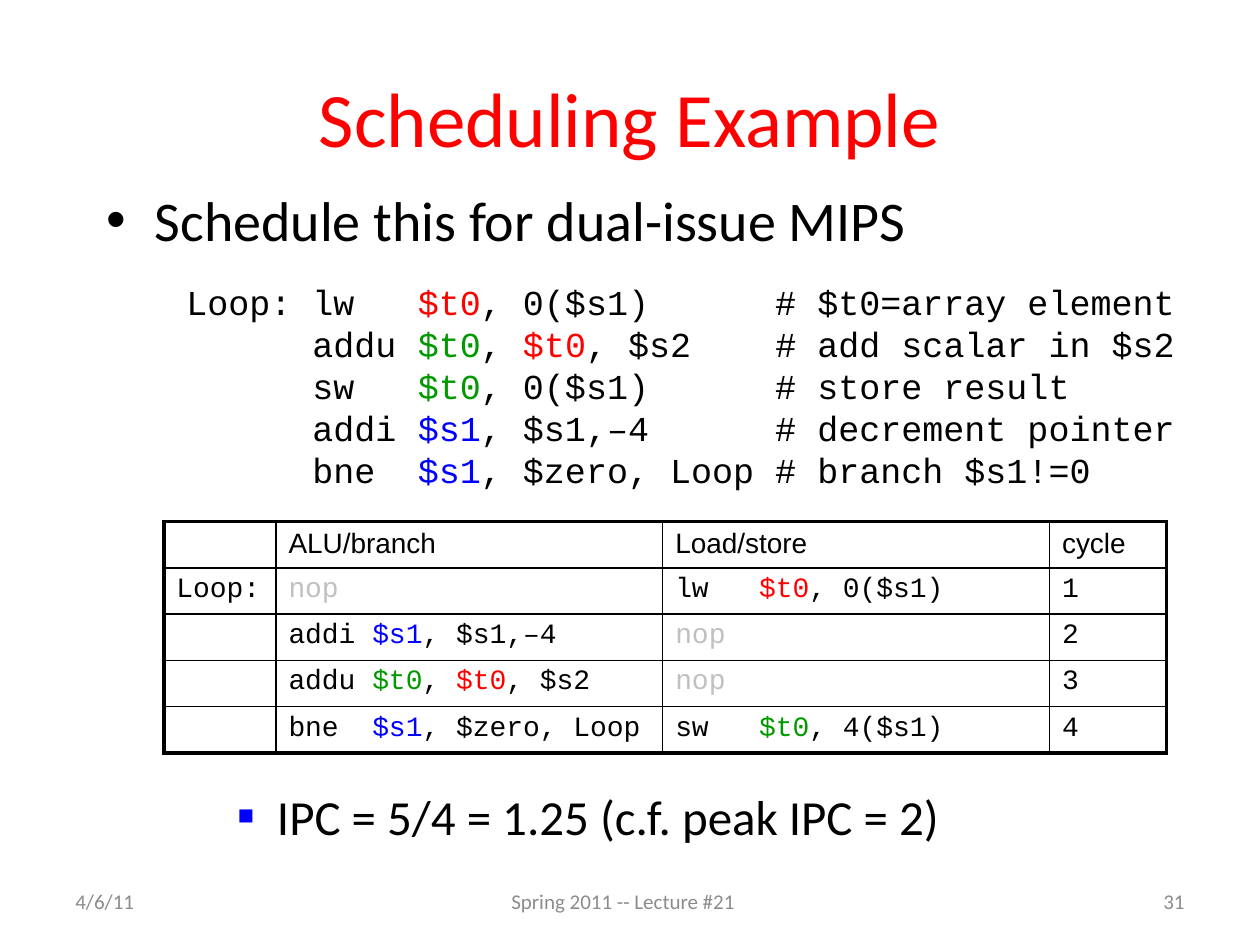
import pptx
import pptx.dml.color
import pptx.enum.text
import pptx.oxml
import pptx.oxml.ns
import pptx.util
from lxml import etree

Inches = pptx.util.Inches
Pt = pptx.util.Pt
ALIGN = pptx.enum.text.PP_ALIGN
MIDDLE = pptx.enum.text.MSO_ANCHOR.MIDDLE
qn = pptx.oxml.ns.qn

THEME = {
    "black": "000000", "red": "FF0000", "green": "009900", "blue": "0000FF",
    "nop": "C0C0C0", "footer": "8C8C8C",
    "sans": "Calibri", "head": "Arial", "mono": "Courier New",
    "title_pt": 44, "bullet_pt": 32, "sub_pt": 28, "code_pt": 20,
    "cell_pt": 16, "footer_pt": 12,
}

# Registers, coloured by the value they carry
LOADED = ("$t0", "red")
SUM = ("$t0", "green")
POINTER = ("$s1", "blue")
NOP = [("nop", "nop")]


def add_runs(p, parts, font, size, color="black"):
    """Add plain strings and (text, colour) pairs as runs."""
    for part in parts:
        text, tint = (part, color) if isinstance(part, str) else part
        r = p.add_run()
        r.text = text
        r.font.name = THEME[font]
        r.font.size = Pt(THEME[size])
        r.font.color.rgb = pptx.dml.color.RGBColor.from_string(THEME[tint])


def add_ppr(p, *children):
    """Append paragraph settings, after 20 percent space before."""
    pPr = p._p.get_or_add_pPr()
    for xml in ('<a:spcBef %s><a:spcPct val="20000"/></a:spcBef>',) + children:
        pPr.append(pptx.oxml.parse_xml(xml % pptx.oxml.ns.nsdecls("a")))
    return pPr


prs = pptx.Presentation()
prs.slide_width, prs.slide_height = Inches(10), Inches(7.5)
slide = prs.slides.add_slide(prs.slide_layouts[5])

# Title
sp = slide.shapes.title
sp.left, sp.top, sp.width, sp.height = Inches(0.5), Inches(0.3), Inches(9), Inches(1.25)
tf = sp.text_frame
tf.vertical_anchor = MIDDLE
p = tf.paragraphs[0]
p.alignment = ALIGN.CENTER
add_runs(p, ["Scheduling Example"], "sans", "title_pt", "red")

# Bullets: text, box, size, left margin, hanging indent, bullet settings
bullets = [
    ("Schedule this for dual-issue MIPS", (0.75, 1.42, 9.05, 0.76), "bullet_pt",
     0.38, -0.38,
     ['<a:buFont %s typeface="Arial"/>', '<a:buChar %s char="•"/>']),
    ("IPC = 5/4 = 1.25 (c.f. peak IPC = 2)", (1.29, 6.19, 8.5, 0.71), "sub_pt",
     0.81, -0.31,
     ['<a:buClr %s><a:srgbClr val="' + THEME["blue"] + '"/></a:buClr>',
      '<a:buSzPct %s val="55000"/>',
      '<a:buFont %s typeface="Arial"/>', '<a:buChar %s char="■"/>']),
]
for text, box, size, margin, indent, marks in bullets:
    sp = slide.shapes.add_textbox(*map(Inches, box))
    tf = sp.text_frame
    tf.word_wrap = True
    p = tf.paragraphs[0]
    pPr = add_ppr(p, *marks)
    pPr.set("marL", str(Inches(margin)))
    pPr.set("indent", str(Inches(indent)))
    add_runs(p, [text], "sans", size)

# Assembly code, one paragraph with line breaks
code = [
    ["Loop: lw   ", LOADED, ", 0($s1)      # $t0=array element"],
    ["      addu ", SUM, ", ", LOADED, ", $s2    # add scalar in $s2"],
    ["      sw   ", SUM, ", 0($s1)      # store result"],
    ["      addi ", POINTER, ", $s1,–4      # decrement pointer"],
    ["      bne  ", POINTER, ", $zero, Loop # branch $s1!=0"],
]
sp = slide.shapes.add_textbox(Inches(1.38), Inches(2.18), Inches(8.15), Inches(1.78))
tf = sp.text_frame
tf.word_wrap = False
p = tf.paragraphs[0]
for i, line in enumerate(code):
    if i:
        p.add_line_break()
    add_runs(p, line, "mono", "code_pt")

# Schedule table
rows = [
    [[], ["ALU/branch"], ["Load/store"], ["cycle"]],
    [["Loop:"], NOP, ["lw   ", LOADED, ", 0($s1)"], ["1"]],
    [[], ["addi ", POINTER, ", $s1,–4"], NOP, ["2"]],
    [[], ["addu ", SUM, ", ", LOADED, ", $s2"], NOP, ["3"]],
    [[], ["bne  ", POINTER, ", $zero, Loop"], ["sw   ", SUM, ", 4($s1)"], ["4"]],
]
widths = [0.89, 3.07, 3.07, 0.93]
last_row, last_col = len(rows) - 1, len(widths) - 1
table = slide.shapes.add_table(len(rows), len(widths), Inches(1.3), Inches(4.14),
                               Inches(sum(widths)), Inches(1.83)).table
table.first_row = table.horz_banding = False
for col, width in zip(table.columns, widths):
    col.width = Inches(width)

THIN, RULE, FRAME = 1, 1.5, 2.25
for i, row in enumerate(rows):
    for j, parts in enumerate(row):
        cell = table.cell(i, j)
        p = cell.text_frame.paragraphs[0]
        add_ppr(p)
        add_runs(p, parts, "mono" if i else "head", "cell_pt")
        if not parts:
            end = etree.SubElement(p._p, qn("a:endParaRPr"))
            end.set("sz", str(THEME["cell_pt"] * 100))

        # Heavy frame, medium rule under the header, thin lines inside
        edges = {
            "a:lnL": FRAME if j == 0 else THIN,
            "a:lnR": FRAME if j == last_col else THIN,
            "a:lnT": FRAME if i == 0 else RULE if i == 1 else THIN,
            "a:lnB": FRAME if i == last_row else RULE if i == 0 else THIN,
        }
        tcPr = cell._tc.get_or_add_tcPr()
        for tag, weight in edges.items():
            ln = etree.SubElement(tcPr, qn(tag), w=str(Pt(weight)))
            fill = etree.SubElement(ln, qn("a:solidFill"))
            etree.SubElement(fill, qn("a:srgbClr"), val=THEME["black"])
        cell.fill.background()

# Footer
footer = [
    ("4/6/11", 0.5, ALIGN.LEFT),
    ("Spring 2011 -- Lecture #21", 3.96, ALIGN.LEFT),
    ("31", 7.17, ALIGN.RIGHT),
]
for text, left, align in footer:
    sp = slide.shapes.add_textbox(Inches(left), Inches(6.95), Inches(2.33), Inches(0.4))
    tf = sp.text_frame
    tf.word_wrap = True
    tf.vertical_anchor = MIDDLE
    p = tf.paragraphs[0]
    p.alignment = align
    add_runs(p, [text], "sans", "footer_pt", "footer")

prs.save("out.pptx")
